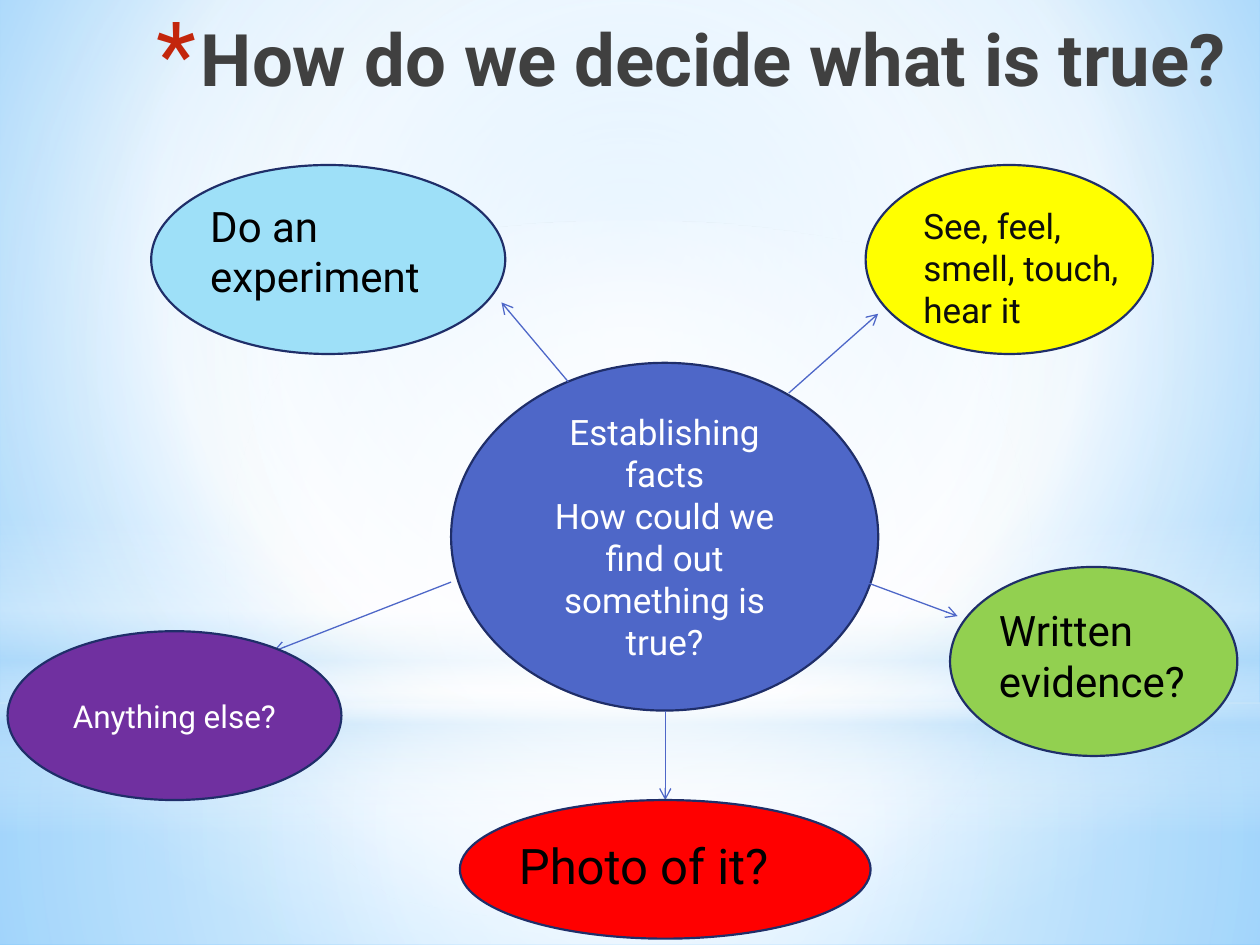
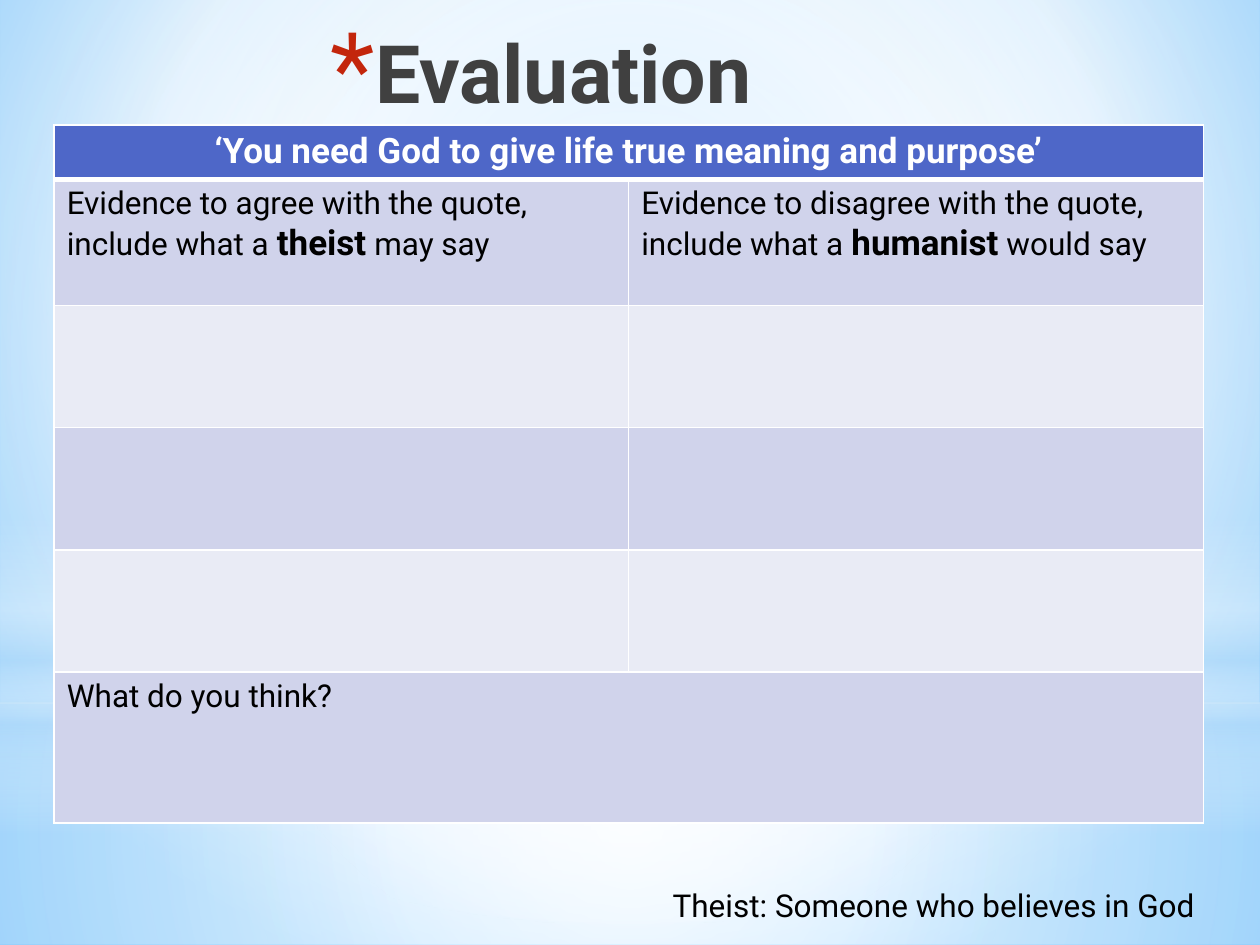
from lxml.etree import SubElement
from pptx import Presentation
from pptx.dml.color import RGBColor
from pptx.enum.shapes import MSO_CONNECTOR, MSO_SHAPE
from pptx.enum.text import MSO_ANCHOR, PP_ALIGN
from pptx.oxml.ns import qn
from pptx.util import Inches, Pt

FONT = "Roboto"
BLUE, NAVY, RED = "4E67C8", "1F2E69", "C3260C"
WHITE, BLACK, GREY, SKY = "FFFFFF", "000000", "404040", "B4DCFA"
BANDS = ["D0D3EB", "E9EBF5"]

MID = (50, 50, 50, 50)
BACK = [(0, "9ED5FF", 100), (60, WHITE, 100), (100, "5BB9FF", 100)]
LAYERS = [
    (MSO_SHAPE.RECTANGLE, (0, 5.58, 10, 1.92),
     [(0, WHITE, 91), (37, WHITE, 76), (100, SKY, 79)], MID),
    (MSO_SHAPE.RECTANGLE, (0, 0, 10, 5.58),
     [(0, WHITE, 89), (48, WHITE, 62), (100, SKY, 79)], MID),
    (MSO_SHAPE.RECTANGLE, (0, 4.12, 10, 2.5),
     [(0, WHITE, 0), (29, WHITE, 30), (45, SKY, 40), (55, WHITE, 26),
      (65, SKY, 60), (100, WHITE, 0)], None),
    (MSO_SHAPE.OVAL, (0, 1.75, 10, 5.58),
     [(0, WHITE, 100), (56, WHITE, 0)], MID),
]

OVALS = [
    ((3.58, 2.88, 3.39, 2.76), BLUE,
     "Establishing facts\nHow could we find out something is true?", 20),
    ((1.2, 1.31, 2.81, 1.5), "9EE0F8", "", 0),
    ((0.06, 5.01, 2.65, 1.34), "7030A0", "Anything else?", 18),
    ((6.87, 1.31, 2.28, 1.5), "FFFF00", "", 0),
    ((7.54, 4.5, 2.28, 1.5), "92D050", "", 0),
    ((3.65, 6.35, 3.26, 1.1), "FF0000", "", 0),
]
ARROWS = [
    (6.26, 3.12, 6.97, 2.49),
    (5.28, 5.64, 5.28, 6.35),
    (3.58, 4.62, 2.17, 5.17),
    (6.87, 4.62, 7.6, 4.89),
    (4.51, 3.03, 3.98, 2.4),
]
LABELS = [
    ((1.57, 1.54, 2.11, 0.91), "Do an experiment", 24, BLACK),
    ((7.23, 1.57, 1.89, 1.11), "See, feel, smell, touch, hear it", 20, "0D0D0D"),
    ((7.83, 4.75, 1.99, 0.91), "Written evidence?", 24, BLACK),
    ((4.02, 6.58, 2.4, 0.57), "Photo of it?", 28, BLACK),
]

QUOTE = "‘You need God to give life true meaning and purpose’"
ROWS = [
    (0.42, [QUOTE]),
    (1, ["Evidence to agree with the quote, include what a |theist| may say",
         "Evidence to disagree with the quote, include what a |humanist| would say"]),
    (0.97, ["", ""]),
    (0.97, ["", ""]),
    (0.97, ["", ""]),
    (1.2, ["What do you think?"]),
]


def rgb(code):
    return RGBColor.from_string(code)


def place(box):
    return [Inches(n) for n in box]


def tag(parent, name, **attrs):
    return SubElement(parent, qn(name), {k: str(v) for k, v in attrs.items()})


def shade(fill, holder, stops, focus):
    fill.solid()
    old = holder.find(qn("a:solidFill"))
    grad = tag(holder, "a:gradFill", rotWithShape=1)
    holder.replace(old, grad)
    row = tag(grad, "a:gsLst")
    for pos, code, alpha in stops:
        stop = tag(row, "a:gs", pos=pos * 1000)
        color = tag(stop, "a:srgbClr", val=code)
        if alpha < 100:
            tag(color, "a:alpha", val=alpha * 1000)
    if focus:
        path = tag(grad, "a:path", path="circle")
        tag(path, "a:fillToRect", **{s: n * 1000 for s, n in zip("ltrb", focus)})
    else:
        tag(grad, "a:lin", ang=5400000, scaled=0)


def write(frame, text, size=18, color=BLACK, bold=False, align=PP_ALIGN.LEFT,
          strong=20, wrap=True):
    frame.word_wrap = wrap
    for i, line in enumerate(text.split("\n")):
        para = frame.add_paragraph() if i else frame.paragraphs[0]
        para.alignment = align
        for j, part in enumerate(line.split("|")):
            run = para.add_run()
            run.text = part
            font = run.font
            font.name = FONT
            font.size = Pt(strong if j % 2 else size)
            font.bold = bold or j % 2 == 1
            font.color.rgb = rgb(color)


def label(slide, box, text, **style):
    frame = slide.shapes.add_textbox(*place(box)).text_frame
    write(frame, text, **style)
    return frame


def title(slide, box, text, size):
    frame = label(slide, box, text, size=size, color=GREY, bold=True,
                  align=PP_ALIGN.RIGHT)
    props = frame.paragraphs[0]._p.get_or_add_pPr()
    props.set("marL", str(Inches(0.35)))
    props.set("indent", str(Inches(-0.35)))
    tag(tag(props, "a:buClr"), "a:srgbClr", val=RED)
    tag(props, "a:buSzPct", val=128000)
    tag(props, "a:buFont", typeface=FONT)
    tag(props, "a:buChar", char="*")


def start(deck):
    slide = deck.slides.add_slide(deck.slide_layouts[6])
    fill = slide.background.fill
    fill.solid()
    shade(fill, slide._element.cSld.bg.bgPr, BACK, (20, 10, 20, 60))
    for kind, box, stops, focus in LAYERS:
        layer = slide.shapes.add_shape(kind, *place(box))
        layer.shadow.inherit = False
        layer.line.fill.background()
        shade(layer.fill, layer._element.spPr, stops, focus)
    return slide


def oval(slide, box, color, text, size):
    shape = slide.shapes.add_shape(MSO_SHAPE.OVAL, *place(box))
    shape.shadow.inherit = False
    shape.fill.solid()
    shape.fill.fore_color.rgb = rgb(color)
    shape.line.color.rgb = rgb(NAVY)
    shape.line.width = Pt(1.25)
    if text:
        shape.text_frame.vertical_anchor = MSO_ANCHOR.MIDDLE
        write(shape.text_frame, text, size=size, color=WHITE,
              align=PP_ALIGN.CENTER)


def arrow(slide, ends):
    line = slide.shapes.add_connector(MSO_CONNECTOR.STRAIGHT, *place(ends))
    line.line.color.rgb = rgb(BLUE)
    line.line.width = Pt(0.75)
    tag(line.line._get_or_add_ln(), "a:tailEnd", type="arrow")
    tag(line._element.spPr, "a:effectLst")


def edge(cell, top, base):
    props = cell._tc.get_or_add_tcPr()
    for side, width in zip("LRTB", (1, 1, top, base)):
        line = tag(props, "a:ln" + side, w=Pt(width))
        tag(tag(line, "a:solidFill"), "a:srgbClr", val=WHITE)


def grid(slide):
    high = sum(row[0] for row in ROWS)
    frame = slide.shapes.add_table(len(ROWS), 2, *place((0.43, 0.99, 9.12, high)))
    table = frame.table
    for r, (tall, texts) in enumerate(ROWS):
        head = r == 0
        table.rows[r].height = Inches(tall)
        for c in range(2):
            cell = table.cell(r, c)
            edge(cell, 3 if r == 1 else 1, 3 if head else 1)
            cell.fill.solid()
            cell.fill.fore_color.rgb = rgb(BLUE if head else BANDS[(r - 1) % 2])
        if len(texts) == 1:
            table.cell(r, 0).merge(table.cell(r, 1))
        for c, text in enumerate(texts):
            if text:
                write(table.cell(r, c).text_frame, text, bold=head,
                      size=20 if head else 18, color=WHITE if head else BLACK,
                      align=PP_ALIGN.CENTER if head else PP_ALIGN.LEFT)


def main():
    deck = Presentation()
    deck.slide_width, deck.slide_height = Inches(10), Inches(7.5)

    facts = start(deck)
    title(facts, (0.06, 0.06, 9.77, 1.25), "How do we decide what is true?", 41.4)
    oval(facts, *OVALS[0])
    for ends in ARROWS:
        arrow(facts, ends)
    for item in OVALS[1:]:
        oval(facts, *item)
    for box, text, size, color in LABELS:
        label(facts, box, text, size=size, color=color)

    review = start(deck)
    title(review, (-1.06, 0.13, 7.12, 1.25), "Evaluation", 46)
    grid(review)
    label(review, (5.24, 6.98, 4.52, 0.4), "Theist: Someone who believes in God",
          wrap=False)
    deck.save("out.pptx")


if __name__ == "__main__":
    main()
